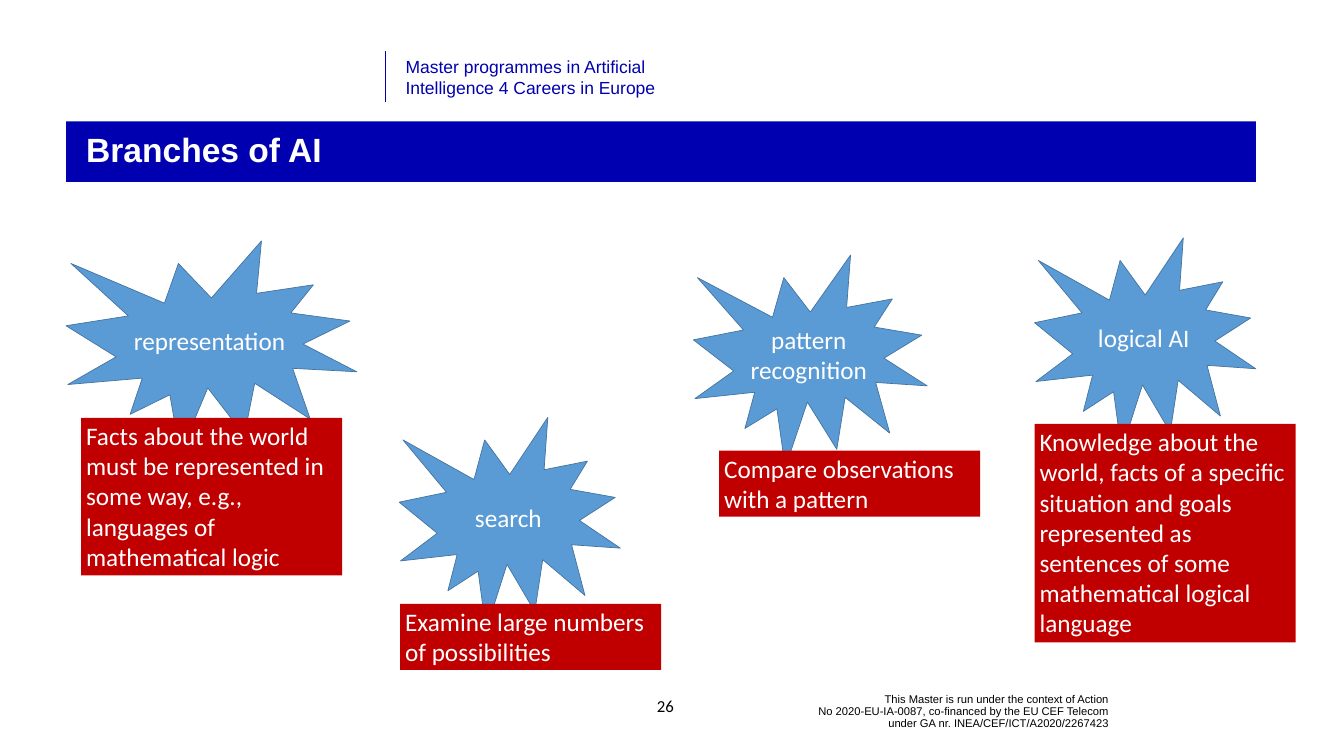
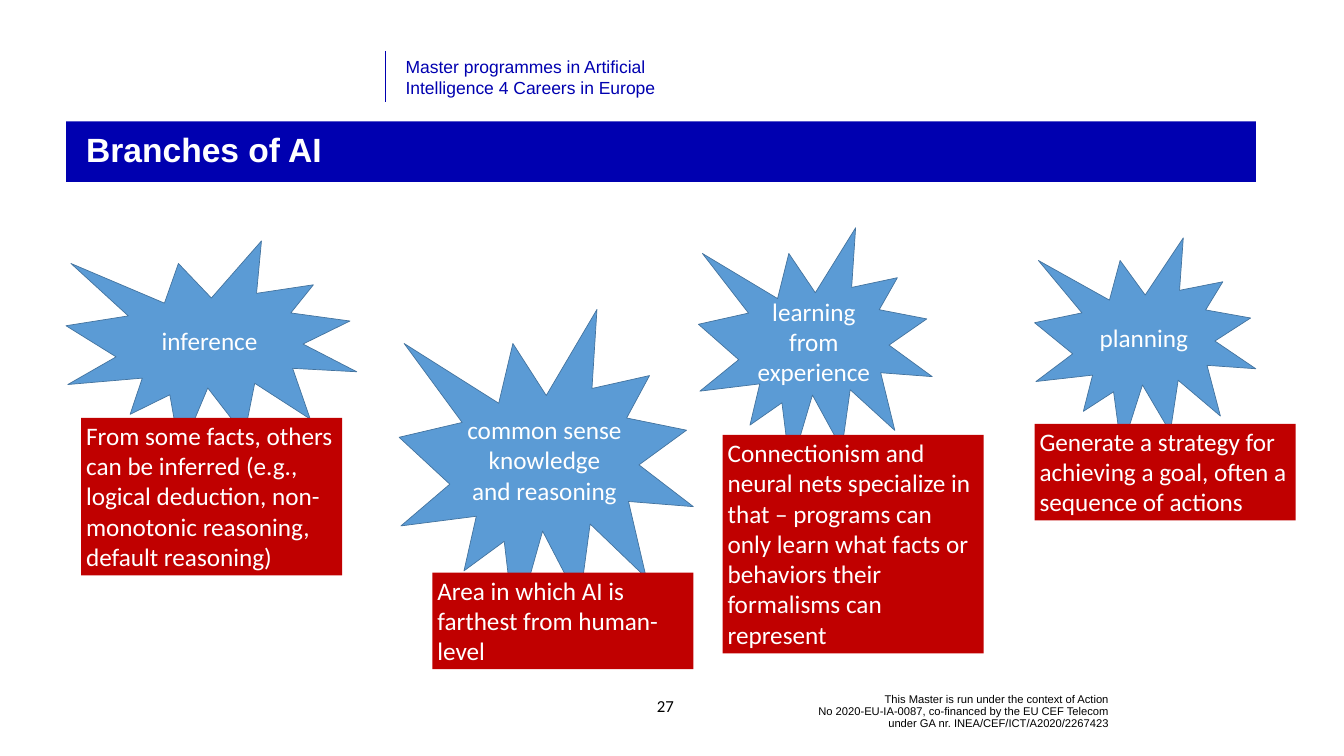
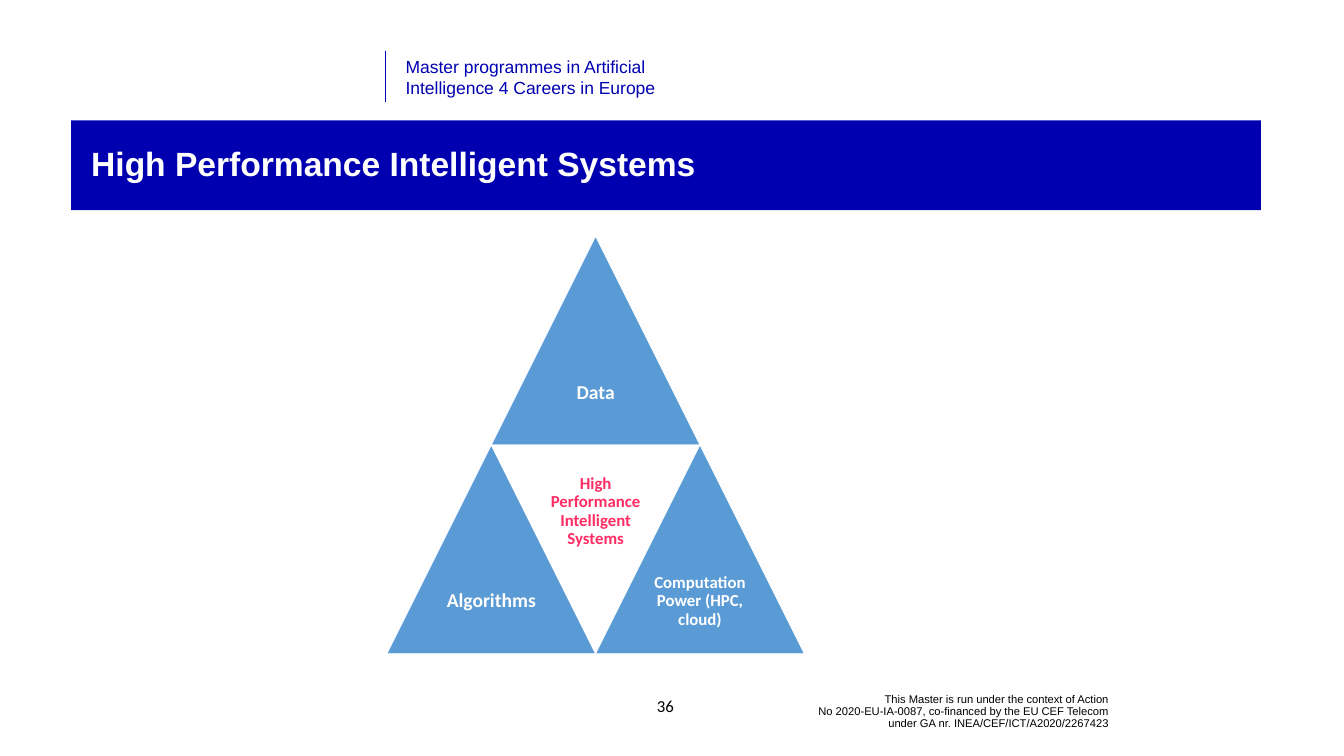
"""Build three slides on the branches of AI and high performance intelligent systems."""
import pptx
import pptx.dml.color
import pptx.enum.shapes
import pptx.enum.text
import pptx.util
from lxml import etree

RGBColor = pptx.dml.color.RGBColor
Pt = pptx.util.Pt
SHAPE = pptx.enum.shapes.MSO_SHAPE
ALIGN = pptx.enum.text.PP_ALIGN
ANCHOR = pptx.enum.text.MSO_ANCHOR
AUTOSIZE = pptx.enum.text.MSO_AUTO_SIZE

PX = 9144
WIDTH, HEIGHT = 2667, 1500

NAVY = RGBColor(0x00, 0x00, 0xB0)
BLUE = RGBColor(0x5B, 0x9B, 0xD5)
DARK_BLUE = RGBColor(0x43, 0x73, 0x9E)
RED = RGBColor(0xC0, 0x00, 0x00)
PINK = RGBColor(0xFF, 0x2D, 0x64)
WHITE = RGBColor(0xFF, 0xFF, 0xFF)
BLACK = RGBColor(0x00, 0x00, 0x00)

PROGRAMME = "Master programmes in Artificial\nIntelligence 4 Careers in Europe"
FUNDING = ("This Master is run under the context of Action\n"
           "No 2020-EU-IA-0087, co-financed by the EU CEF Telecom\n"
           "under GA nr. INEA/CEF/ICT/A2020/2267423")

# Each branch: name, burst box, description, its left and top, its number of lines
BRANCH_SLIDES = [
    (26, [
        ("representation", (131, 478, 577, 422),
         "Facts about the world must be represented in some way, e.g., "
         "languages of mathematical logic", (161, 829), 5),
        ("search", (792, 828, 439, 422),
         "Examine large numbers of possibilities", (794, 1198), 2),
        ("pattern recognition", (1376, 506, 464, 422),
         "Compare observations with a pattern", (1427, 894), 2),
        ("logical AI", (2053, 472, 439, 422),
         "Knowledge about the world, facts of a specific situation and goals "
         "represented as sentences of some mathematical logical language", (2053, 841), 7),
    ]),
    (27, [
        ("inference", (131, 478, 577, 422),
         "From some facts, others can be inferred (e.g., logical deduction, "
         "non-monotonic reasoning, default reasoning)", (161, 829), 5),
        ("common sense knowledge and reasoning", (792, 614, 584, 636),
         "Area in which AI is farthest from human-level", (858, 1136), 3),
        ("learning from experience", (1386, 452, 464, 480),
         "Connectionism and neural nets specialize in that – programs can only learn "
         "what facts or behaviors their formalisms can represent", (1434, 863), 7),
        ("planning", (2053, 472, 439, 422),
         "Generate a strategy for achieving a goal, often a sequence of actions",
         (2053, 841), 3),
    ]),
]
DESCRIPTION_WIDTH, LINE_HEIGHT, DESCRIPTION_PADDING = 518, 60.5, 10

PYRAMID_LEFT, PYRAMID_TOP, HALF_SIDE = 768, 469, 207
# Each part: text, column and row in half and whole sides, size, pointing down
PYRAMID = [
    ("Data", 1, 0, 28, False),
    ("Algorithms", 0, 1, 28, False),
    ("High Performance Intelligent Systems", 1, 1, 24, True),
    ("Computation Power (HPC, cloud)", 2, 1, 24, False),
]


def emu(*lengths):
    return [pptx.util.Emu(round(length * PX)) for length in lengths]


def write(shape, text, size, color, font="Calibri", bold=False, align=ALIGN.LEFT,
          anchor=ANCHOR.TOP, spacing=None, insets=(10, 5, 10, 5), fit=AUTOSIZE.NONE):
    frame = shape.text_frame
    frame.word_wrap = True
    frame.auto_size = fit
    frame.vertical_anchor = anchor
    (frame.margin_left, frame.margin_top,
     frame.margin_right, frame.margin_bottom) = emu(*insets)
    paragraph = frame.paragraphs[0]
    paragraph.text = text
    paragraph.alignment = align
    paragraph.line_spacing = spacing
    paragraph.font.name = font
    paragraph.font.size = Pt(size)
    paragraph.font.bold = bold
    paragraph.font.color.rgb = color


def paint(shape, fill, line=None):
    shape.fill.solid()
    shape.fill.fore_color.rgb = fill
    if line is not None:
        shape.shadow.inherit = False
        shape.line.color.rgb = line
        shape.line.width = Pt(1)


def add_text(slide, box, text, size, color, **style):
    label = slide.shapes.add_textbox(*emu(*box))
    write(label, text, size, color, **style)
    return label


def add_page(deck, title, number, band):
    slide = deck.slides.add_slide(deck.slide_layouts[5])
    add_text(slide, (1502, 1374, 708, 76), FUNDING, 16, BLACK, font="Arial",
             align=ALIGN.RIGHT, anchor=ANCHOR.MIDDLE, spacing=0.9)
    divider = slide.shapes.add_connector(
        pptx.enum.shapes.MSO_CONNECTOR.STRAIGHT, *emu(765, 101, 765, 203))
    divider.line.color.rgb = NAVY
    divider.line.width = Pt(0.5)
    etree.SubElement(divider.line._get_or_add_ln().getparent(),
                     pptx.oxml.ns.qn("a:effectLst"))
    add_text(slide, (795, 106, 637, 94), PROGRAMME, 25, NAVY, font="Arial",
             fit=AUTOSIZE.SHAPE_TO_FIT_TEXT)
    heading = slide.shapes.title
    heading.left, heading.top, heading.width, heading.height = emu(*band)
    paint(heading, NAVY)
    write(heading, title, 48, WHITE, font="Arial", bold=True, anchor=ANCHOR.MIDDLE,
          spacing=0.9, insets=(40, 5, 10, 5))
    add_text(slide, (1265, 1361, 111, 80), str(number), 24, BLACK,
             align=ALIGN.CENTER, anchor=ANCHOR.MIDDLE)
    return slide


def add_branch(slide, name, burst_box, description, corner, lines):
    burst = slide.shapes.add_shape(SHAPE.EXPLOSION1, *emu(*burst_box))
    paint(burst, BLUE, DARK_BLUE)
    write(burst, name, 36, WHITE, align=ALIGN.CENTER, anchor=ANCHOR.MIDDLE)
    box = (*corner, DESCRIPTION_WIDTH, lines * LINE_HEIGHT + DESCRIPTION_PADDING)
    paint(add_text(slide, box, description, 36, WHITE,
                   fit=AUTOSIZE.SHAPE_TO_FIT_TEXT), RED)


def add_pyramid_part(slide, text, column, row, size, down):
    side = 2 * HALF_SIDE
    left = PYRAMID_LEFT + column * HALF_SIDE
    top = PYRAMID_TOP + row * side
    triangle = slide.shapes.add_shape(SHAPE.ISOSCELES_TRIANGLE, *emu(left, top, side, side))
    triangle.rotation = 180 if down else 0
    paint(triangle, WHITE if down else BLUE, WHITE)
    text_top = top if down else top + HALF_SIDE
    add_text(slide, (left + HALF_SIDE / 2, text_top, HALF_SIDE, HALF_SIDE), text, size,
             PINK if down else WHITE, bold=True, align=ALIGN.CENTER,
             anchor=ANCHOR.MIDDLE, spacing=0.9,
             insets=(12, 57, 12, 0) if down else (10, 10, 10, 10))


def main():
    deck = pptx.Presentation()
    deck.slide_width, deck.slide_height = emu(WIDTH, HEIGHT)
    for number, branches in BRANCH_SLIDES:
        slide = add_page(deck, "Branches of AI", number, (131, 241, 2361, 120))
        for branch in branches:
            add_branch(slide, *branch)
    slide = add_page(deck, "High Performance Intelligent Systems", 36,
                     (141, 239, 2361, 178))
    for part in PYRAMID:
        add_pyramid_part(slide, *part)
    deck.save("out.pptx")


if __name__ == "__main__":
    main()
